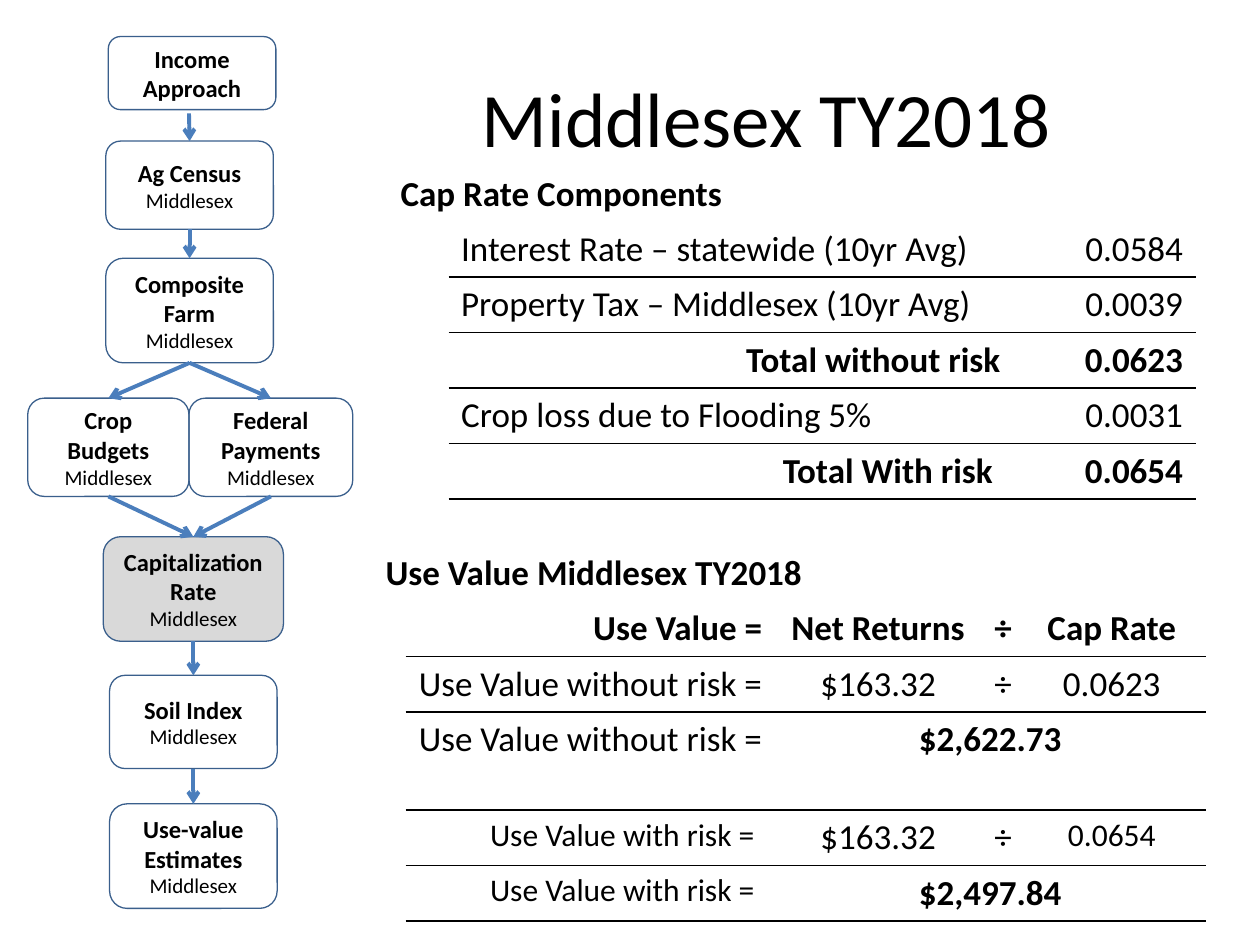
from lxml.etree import SubElement
from pptx import Presentation
from pptx.dml.color import RGBColor
from pptx.enum.shapes import MSO_CONNECTOR, MSO_SHAPE
from pptx.enum.text import MSO_ANCHOR, PP_ALIGN
from pptx.oxml import parse_xml
from pptx.oxml.ns import qn
from pptx.util import Inches, Pt

FONT = "Calibri"
BLACK, OUTLINE, ARROW, GREY = "000000", "3A5F8C", "4B7EBC", "D9D9D9"
NO_STYLE = "{2D5ABB26-0587-4C30-8999-92F81FD0307C}"
DRAWING = "http://schemas.openxmlformats.org/drawingml/2006/main"
ALIGN = {"l": PP_ALIGN.LEFT, "c": PP_ALIGN.CENTER, "r": PP_ALIGN.RIGHT}
TOP, BOTTOM = 0, 2
ROW = 0.44
MARGIN = 0.1

COUNTY = "Middlesex"
STEPS = {
    "Income Approach": (0.86, 0.29, 1.33, 0.58),
    "Ag Census": (0.84, 1.12, 1.33, 0.7),
    "Composite Farm": (0.84, 2.05, 1.33, 0.83),
    "Crop Budgets": (0.22, 3.16, 1.28, 0.78),
    "Federal Payments": (1.5, 3.16, 1.3, 0.78),
    "Capitalization Rate": (0.82, 4.26, 1.43, 0.83),
    "Soil Index": (0.87, 5.36, 1.33, 0.74),
    "Use-value Estimates": (0.87, 6.38, 1.33, 0.83),
}
FIRST, CURRENT = "Income Approach", "Capitalization Rate"
FLOWS = [
    ("Income Approach", "Ag Census"),
    ("Ag Census", "Composite Farm"),
    ("Composite Farm", "Crop Budgets"),
    ("Composite Farm", "Federal Payments"),
    ("Crop Budgets", "Capitalization Rate"),
    ("Federal Payments", "Capitalization Rate"),
    ("Capitalization Rate", "Soil Index"),
    ("Soil Index", "Use-value Estimates"),
]

# Each cell: column, text, alignment, bold, size, side margin, columns spanned
CAP_RATE = [
    [(0, "Cap Rate Components", "l", True, 20, MARGIN, 2)],
    [(1, "Interest Rate – statewide (10yr Avg)", "l", False, 20, MARGIN, 1),
     (2, "0.0584", "r", False, 20, MARGIN, 1)],
    [(1, "Property Tax – Middlesex (10yr Avg)", "l", False, 20, MARGIN, 1),
     (2, "0.0039", "r", False, 20, MARGIN, 1)],
    [(1, "Total without risk", "r", True, 20, MARGIN, 1),
     (2, "0.0623", "r", True, 20, MARGIN, 1)],
    [(1, "Crop loss due to Flooding 5%", "l", False, 20, MARGIN, 1),
     (2, "0.0031", "r", False, 20, MARGIN, 1)],
    [(1, "Total With risk", "r", True, 20, 0.16, 1),
     (2, "0.0654", "r", True, 20, MARGIN, 1)],
]
USE_VALUE = [
    [(0, "Use Value Middlesex TY2018", "l", True, 20, MARGIN, 5)],
    [(1, "Use Value =", "r", True, 20, MARGIN, 1),
     (2, "Net Returns", "c", True, 20, MARGIN, 1),
     (3, "÷", "r", True, 20, 0.05, 1),
     (4, "Cap Rate", "c", True, 20, MARGIN, 1)],
    [(1, "Use Value without risk =", "r", False, 20, MARGIN, 1),
     (2, "$163.32", "c", False, 20, MARGIN, 1),
     (3, "÷", "r", False, 20, 0.05, 1),
     (4, "0.0623", "c", False, 20, MARGIN, 1)],
    [(1, "Use Value without risk =", "r", False, 20, MARGIN, 1),
     (2, "$2,622.73", "c", True, 20, MARGIN, 3)],
    [(1, "Use Value with risk =", "r", False, 18, 0.16, 1),
     (2, "$163.32", "c", False, 20, MARGIN, 1),
     (3, "÷", "r", False, 20, 0.05, 1),
     (4, "0.0654", "c", False, 18, MARGIN, 1)],
    [(1, "Use Value with risk =", "r", False, 18, 0.16, 1),
     (2, "$2,497.84", "c", True, 20, MARGIN, 3)],
]
TABLES = [
    ((3.08, 1.32), (0.48, 4.48, 1.45), [ROW] * 6, CAP_RATE),
    ((2.96, 4.33), (0.26, 2.93, 1.64, 0.29, 1.49),
     [ROW] * 3 + [0.78] + [ROW] * 2, USE_VALUE),
]


def color(value):
    return RGBColor.from_string(value)


def write(para, text, size, bold=False, align="c"):
    para.text = text
    para.alignment = ALIGN[align]
    para.font.name = FONT
    para.font.size = Pt(size)
    para.font.bold = bold
    para.font.color.rgb = color(BLACK)


def add_step(page, name, place):
    box = page.shapes.add_shape(
        MSO_SHAPE.FLOWCHART_ALTERNATE_PROCESS, *map(Inches, place))
    box.shadow.inherit = False
    if name == CURRENT:
        box.fill.solid()
        box.fill.fore_color.rgb = color(GREY)
    else:
        box.fill.background()
    box.line.color.rgb = color(OUTLINE)
    box.line.width = Pt(0.75)
    frame = box.text_frame
    frame.word_wrap = True
    frame.vertical_anchor = MSO_ANCHOR.MIDDLE
    write(frame.paragraphs[0], name, 14, True)
    if name != FIRST:
        write(frame.add_paragraph(), COUNTY, 12)
    return box


def add_flow(page, source, target, joined):
    arrow = page.shapes.add_connector(
        MSO_CONNECTOR.STRAIGHT, Inches(1.5), Inches(0.9), Inches(1.5), Inches(1.12))
    if joined:
        arrow.begin_connect(source, BOTTOM)
    arrow.end_connect(target, TOP)
    arrow.line.color.rgb = color(ARROW)
    arrow.line.width = Pt(2.25)
    SubElement(arrow.line._get_or_add_ln(), qn("a:tailEnd"), type="arrow")
    SubElement(arrow._element.spPr, qn("a:effectLst"))


def underline(cell):
    cell._tc.get_or_add_tcPr().insert(0, parse_xml(
        f'<a:lnB xmlns:a="{DRAWING}" w="{Pt(1)}"><a:solidFill>'
        f'<a:srgbClr val="{BLACK}"/></a:solidFill></a:lnB>'))


def add_grid(page, corner, widths, heights, rows):
    place = (*corner, sum(widths), sum(heights))
    table = page.shapes.add_table(
        len(rows), len(widths), *map(Inches, place)).table
    table.first_row = table.horz_banding = False
    table._tbl.tblPr.find(qn("a:tableStyleId")).text = NO_STYLE
    for column, width in zip(table.columns, widths):
        column.width = Inches(width)
    for index, (height, cells) in enumerate(zip(heights, rows)):
        table.rows[index].height = Inches(height)
        for number in range(len(widths)):
            cell = table.cell(index, number)
            cell.fill.background()
            if index and number:
                underline(cell)
        for number, text, align, bold, size, margin, span in cells:
            cell = table.cell(index, number)
            if span > 1:
                cell.merge(table.cell(index, number + span - 1))
            cell.margin_left = cell.margin_right = Inches(margin)
            write(cell.text_frame.paragraphs[0], text, size, bold, align)


def main():
    deck = Presentation()
    deck.slide_width, deck.slide_height = Inches(10), Inches(7.5)
    page = deck.slides.add_slide(deck.slide_layouts[6])
    boxes = {name: add_step(page, name, place) for name, place in STEPS.items()}
    for source, target in FLOWS:
        add_flow(page, boxes[source], boxes[target], source != FIRST)
    title = page.shapes.add_textbox(*map(Inches, (2.67, 0.3, 6.83, 1.25))).text_frame
    title.word_wrap = True
    title.vertical_anchor = MSO_ANCHOR.MIDDLE
    write(title.paragraphs[0], "Middlesex TY2018", 44)
    for table in TABLES:
        add_grid(page, *table)
    deck.save("out.pptx")


if __name__ == "__main__":
    main()
